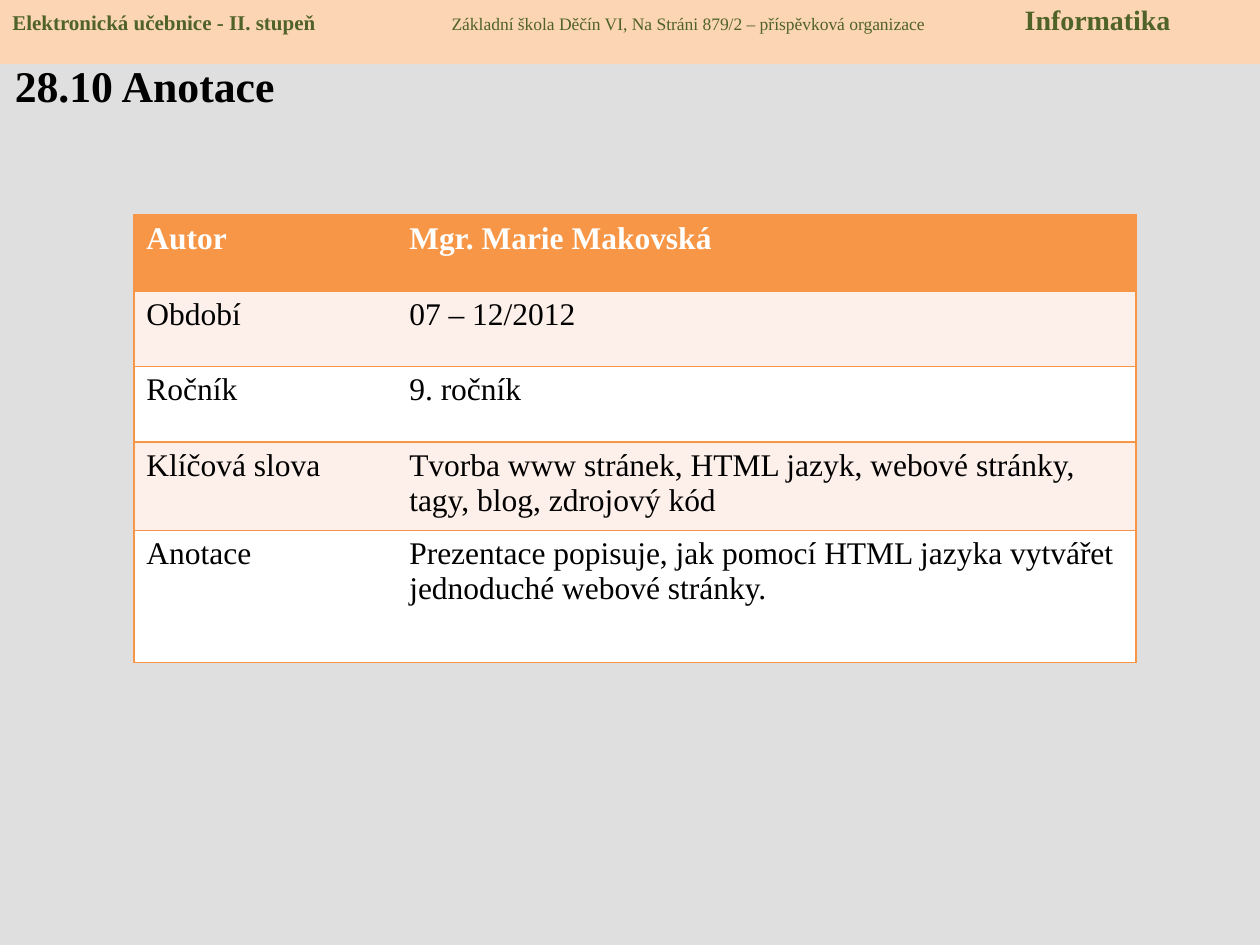
"""Annotation slide with a header band, a title and a table of lesson details."""
from lxml.etree import SubElement
from pptx import Presentation
from pptx.dml.color import RGBColor
from pptx.enum.shapes import MSO_SHAPE
from pptx.enum.text import MSO_ANCHOR, PP_ALIGN
from pptx.oxml.ns import qn
from pptx.util import Pt

COLORS = {"background": "DFDFDF", "band": "FCD5B5", "header": "4F6228", "accent": "F79646",
          "tint": "FDEFE9", "white": "FFFFFF", "black": "000000"}
ROWS = [("Autor", "Mgr. Marie Makovská"),
        ("Období", "07 – 12/2012"),
        ("Ročník", "9. ročník"),
        ("Klíčová slova", "Tvorba www stránek, HTML jazyk, webové stránky, tagy, blog, zdrojový kód"),
        ("Anotace", "Prezentace popisuje, jak pomocí HTML jazyka vytvářet jednoduché webové stránky.")]
COL_WIDTHS = [150.2, 422.6]
ROW_HEIGHTS = [43.2] * 4 + [75.6]
HEADER = [("Elektronická učebnice - II. stupeň\t", 12, True),
          ("Základní škola Děčín VI, Na Stráni 879/2 – příspěvková organizace\t", 10, False),
          ("Informatika", 16, True)]


def add_run(p, text, size, color, bold):
    r = p.add_run()
    r.text = text
    r.font.name = "Times New Roman"
    r.font.size = Pt(size)
    r.font.bold = bold
    r.font.color.rgb = RGBColor.from_string(COLORS[color])


def add_border(cell, side, visible):
    ln = SubElement(cell._tc.get_or_add_tcPr(), qn(f"a:ln{side}"), w=str(Pt(1)))
    if visible:
        fill = SubElement(ln, qn("a:solidFill"))
        SubElement(fill, qn("a:srgbClr"), val=COLORS["accent"])
    else:
        SubElement(ln, qn("a:noFill"))


prs = Presentation()
prs.slide_width, prs.slide_height = Pt(720), Pt(540)
s = prs.slides.add_slide(prs.slide_layouts[6])
s.background.fill.solid()
s.background.fill.fore_color.rgb = RGBColor.from_string(COLORS["background"])

title = s.shapes.add_textbox(Pt(1.4), Pt(30.2), Pt(229.7), Pt(46.8))
title.text_frame.word_wrap = True
add_run(title.text_frame.paragraphs[0], "28.10 Anotace", 25, "black", True)

table = s.shapes.add_table(len(ROWS), 2, Pt(76.5), Pt(123), Pt(sum(COL_WIDTHS)), Pt(sum(ROW_HEIGHTS))).table
for column, width in zip(table.columns, COL_WIDTHS):
    column.width = Pt(width)
for i, (row, height, texts) in enumerate(zip(table.rows, ROW_HEIGHTS, ROWS)):
    row.height = Pt(height)
    fill = "accent" if i == 0 else "tint" if i % 2 else "white"
    for j, (cell, text) in enumerate(zip(row.cells, texts)):
        for side, visible in (("L", j == 0), ("R", j == 1), ("T", True), ("B", True)):
            add_border(cell, side, visible)
        cell.fill.solid()
        cell.fill.fore_color.rgb = RGBColor.from_string(COLORS[fill])
        add_run(cell.text_frame.paragraphs[0], text, 18, "black" if i else "white", i == 0)

band = s.shapes.add_shape(MSO_SHAPE.RECTANGLE, Pt(0), Pt(-2.2), Pt(720), Pt(38.9))
band.shadow.inherit = False
band.fill.solid()
band.fill.fore_color.rgb = RGBColor.from_string(COLORS["band"])
band.line.fill.background()
tf = band.text_frame
tf.word_wrap = True
tf.vertical_anchor = MSO_ANCHOR.TOP
p = tf.paragraphs[0]
p.alignment = PP_ALIGN.LEFT
tabs = SubElement(p._p.get_or_add_pPr(), qn("a:tabLst"))
for position in (251, 578.5):
    SubElement(tabs, qn("a:tab"), pos=str(Pt(position)), algn="l")
for text, size, bold in HEADER:
    add_run(p, text, size, "header", bold)

prs.save("out.pptx")
